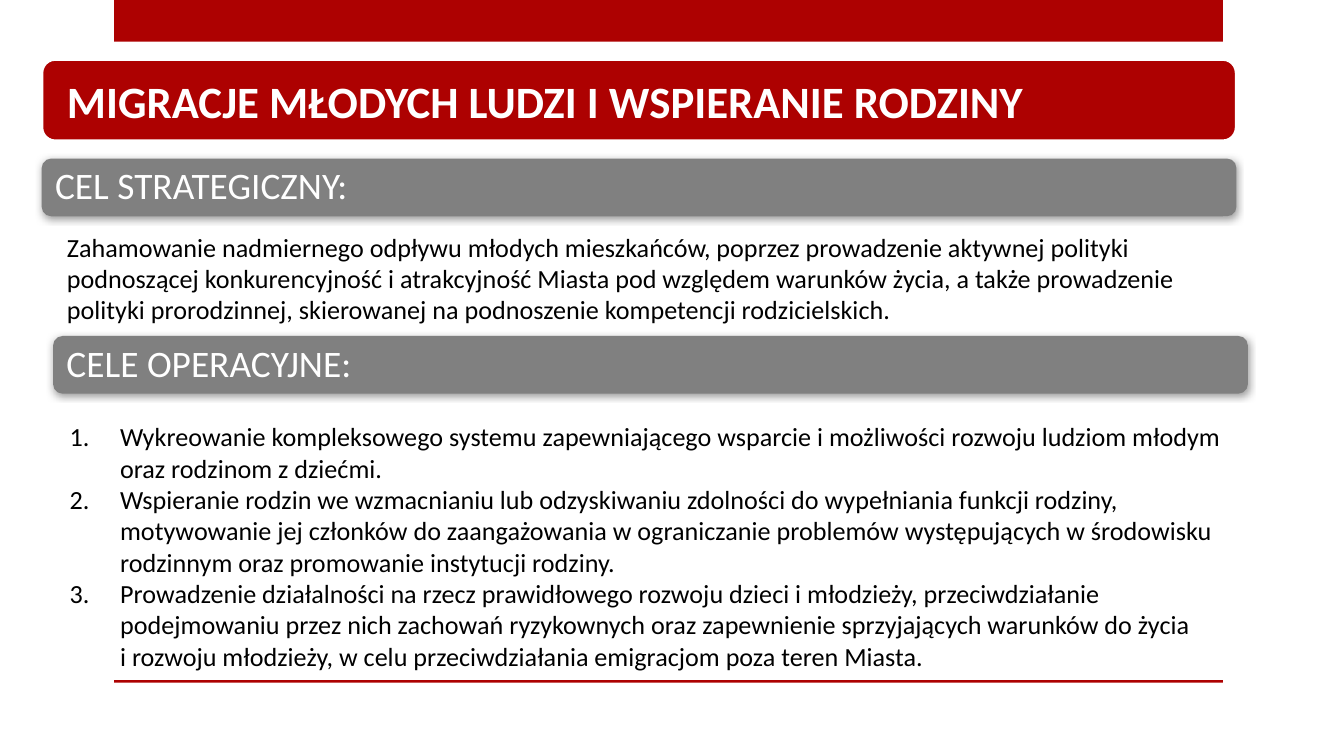
from dataclasses import dataclass

from lxml import etree
from pptx import Presentation
from pptx.dml.color import RGBColor
from pptx.enum.shapes import MSO_SHAPE
from pptx.enum.text import MSO_ANCHOR, MSO_AUTO_SIZE
from pptx.oxml.ns import qn
from pptx.util import Emu, Pt

RECTANGLE = MSO_SHAPE.RECTANGLE
ROUNDED = MSO_SHAPE.ROUNDED_RECTANGLE
MIDDLE = MSO_ANCHOR.MIDDLE
GROW = MSO_AUTO_SIZE.SHAPE_TO_FIT_TEXT
PX = 4572  # 200 px to the inch


@dataclass(frozen=True)
class Theme:
    font: str = "Calibri"
    red: str = "AD0101"
    gray: str = "808080"
    white: str = "FFFFFF"
    black: str = "000000"
    title: int = 24
    heading: int = 20
    body: int = 14


THEME = Theme()

STRATEGIC_GOAL = (
    "Zahamowanie nadmiernego odpływu młodych mieszkańców, poprzez prowadzenie "
    "aktywnej polityki podnoszącej konkurencyjność i atrakcyjność Miasta pod "
    "względem warunków życia, a także prowadzenie polityki prorodzinnej, "
    "skierowanej na podnoszenie kompetencji rodzicielskich."
)
OPERATIONAL_GOALS = [
    "Wykreowanie kompleksowego systemu zapewniającego wsparcie i możliwości "
    "rozwoju ludziom młodym oraz rodzinom z dziećmi.",
    "Wspieranie rodzin we wzmacnianiu lub odzyskiwaniu zdolności do wypełniania "
    "funkcji rodziny, motywowanie jej członków do zaangażowania w ograniczanie "
    "problemów występujących w środowisku rodzinnym oraz promowanie instytucji rodziny.",
    "Prowadzenie działalności na rzecz prawidłowego rozwoju dzieci i młodzieży, "
    "przeciwdziałanie podejmowaniu przez nich zachowań ryzykownych oraz "
    "zapewnienie sprzyjających warunków do życia \n"
    "i rozwoju młodzieży, w celu przeciwdziałania emigracjom poza teren Miasta.",
]


def px(*lengths):
    return [Emu(length * PX) for length in lengths]


def add_panel(shapes, kind, at, color):
    panel = shapes.add_shape(kind, *px(*at))
    panel.shadow.inherit = False
    panel.fill.solid()
    panel.fill.fore_color.rgb = RGBColor.from_string(color)
    panel.line.fill.background()
    return panel


def add_soft_shadow(panel):
    effects = panel._element.spPr.find(qn("a:effectLst"))
    shadow = etree.SubElement(
        effects, qn("a:outerShdw"), blurRad=str(Pt(4)), dist=str(Pt(1)),
        dir=str(88 * 60000), rotWithShape="0")
    color = etree.SubElement(shadow, qn("a:srgbClr"), val=THEME.black)
    etree.SubElement(color, qn("a:alpha"), val="40000")


def add_text(shapes, at, texts, size, color):
    box = shapes.add_textbox(*px(*at))
    frame = box.text_frame
    frame.word_wrap = True
    for index, text in enumerate(texts):
        para = frame.add_paragraph() if index else frame.paragraphs[0]
        para.text = text
        para.font.name = THEME.font
        para.font.size = Pt(size)
        para.font.color.rgb = RGBColor.from_string(color)
    return frame


def add_label(shapes, at, text, size, inset, bold=False):
    frame = add_text(shapes, at, [text], size, THEME.white)
    frame.vertical_anchor = MIDDLE
    frame.margin_left, frame.margin_top, frame.margin_right, frame.margin_bottom = px(*[inset] * 4)
    para = frame.paragraphs[0]
    para.line_spacing = 0.9
    para.font.bold = bold


def add_title(page, text):
    group = page.shapes.add_group_shape().shapes
    panel = add_panel(group, ROUNDED, (62, 88, 1778, 122), THEME.red)
    panel.line.color.rgb = RGBColor.from_string(THEME.white)
    panel.line.width = Pt(1.75)
    add_label(group, (80, 100, 1766, 110), text, THEME.title, 20, bold=True)


def add_heading(page, left, top, text):
    group = page.shapes.add_group_shape().shapes
    add_soft_shadow(add_panel(group, ROUNDED, (left, top, 1778, 86), THEME.gray))
    add_label(group, (left + 4, top + 4, 1768, 78), text, THEME.heading, 16)


def add_body(page, at, texts):
    frame = add_text(page.shapes, at, texts, THEME.body, THEME.black)
    frame.auto_size = GROW
    return frame


def number_paragraphs(frame):
    indent = 75 * PX
    for para in frame.paragraphs:
        properties = para._p.get_or_add_pPr()
        properties.set("marL", str(indent))
        properties.set("indent", str(-indent))
        numbering = etree.Element(qn("a:buAutoNum"), type="arabicPeriod")
        properties.insert_element_before(numbering, "a:tabLst", "a:defRPr", "a:extLst")


def main():
    deck = Presentation()
    deck.slide_width, deck.slide_height = px(2000, 1125)
    page = deck.slides.add_slide(deck.slide_layouts[6])

    # Red bands at the top and bottom
    for top, height in ((0, 62), (1012, 4)):
        add_panel(page.shapes, RECTANGLE, (170, top, 1650, height), THEME.red)

    add_title(page, "MIGRACJE MŁODYCH LUDZI I WSPIERANIE RODZINY")

    # Strategic goal
    add_heading(page, 62, 236, "CEL STRATEGICZNY:")
    add_body(page, (80, 334, 1714, 162), [STRATEGIC_GOAL])

    # Operational goals
    add_heading(page, 79, 500, "CELE OPERACYJNE:")
    number_paragraphs(add_body(page, (84, 616, 1782, 398), OPERATIONAL_GOALS))

    deck.save("out.pptx")


if __name__ == "__main__":
    main()
